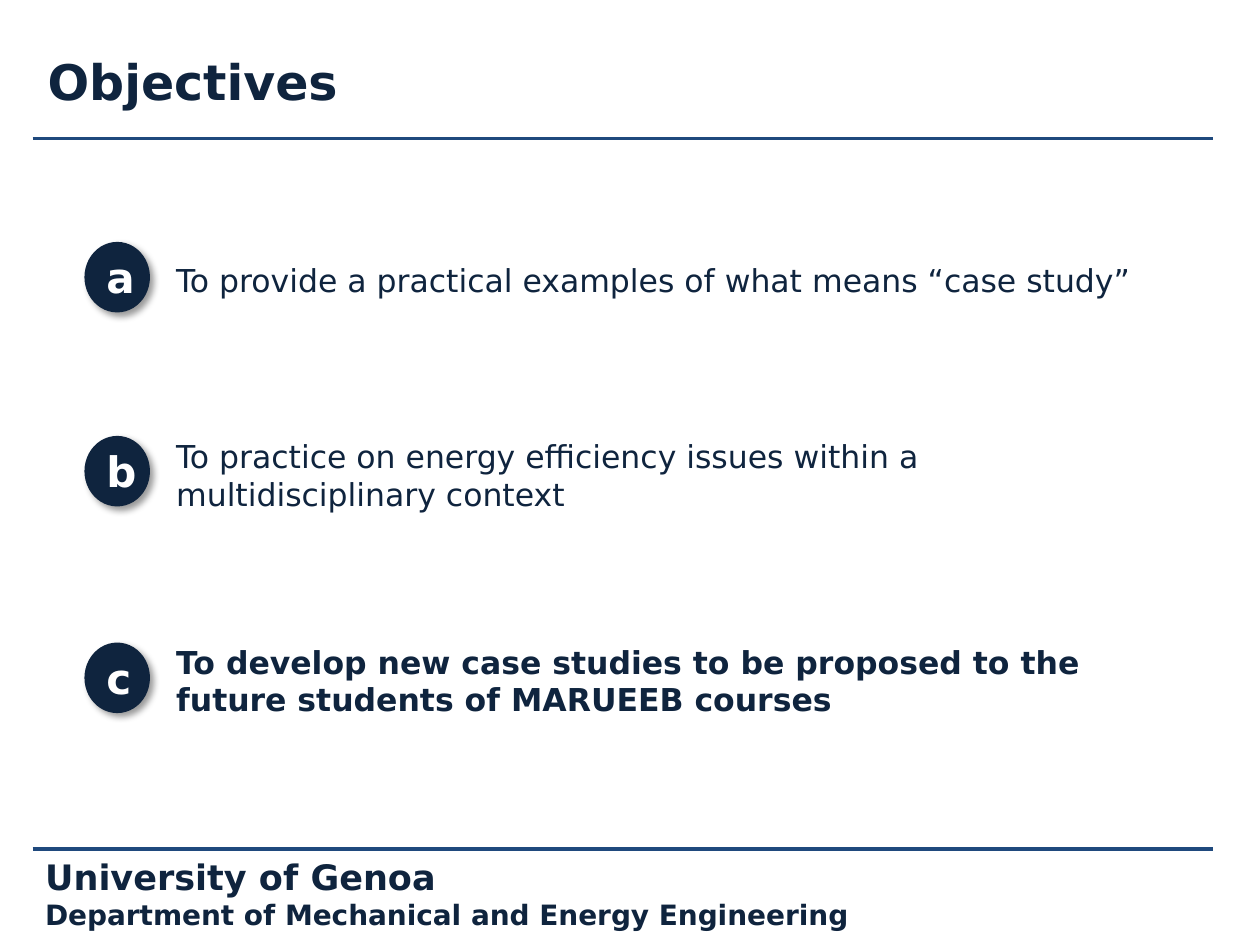
from lxml import etree
from pptx import Presentation
from pptx.dml.color import RGBColor as Rgb
from pptx.enum.shapes import MSO_CONNECTOR as Connector, MSO_SHAPE as Preset
from pptx.enum.text import MSO_ANCHOR as Anchor, MSO_AUTO_SIZE as AutoSize, PP_ALIGN as Align
from pptx.oxml import parse_xml
from pptx.oxml.ns import nsdecls, qn
from pptx.util import Inches, Pt

COLORS = {"navy": "0F243E", "rule": "1F497D", "badge": "FFFFFF", "shadow": "000000"}
COLUMNS, ROWS = 100, 75


class ObjectivesSlide:
    """Draws styled elements on one slide, placed by grid columns and rows."""

    def __init__(self, deck):
        self.slide = deck.slides.add_slide(deck.slide_layouts[6])
        self.column = deck.slide_width / COLUMNS
        self.row = deck.slide_height / ROWS
        self.font = "DejaVu Sans"

    def place(self, left, top, width, height):
        return (round(left * self.column), round(top * self.row),
                round(width * self.column), round(height * self.row))

    def color(self, name):
        return Rgb.from_string(COLORS[name])

    def fill_text(self, frame, lines, color="navy", align=Align.LEFT, **frame_format):
        for key, value in {"word_wrap": True, **frame_format}.items():
            setattr(frame, key, value)
        for index, (words, size, bold) in enumerate(lines):
            paragraph = frame.add_paragraph() if index else frame.paragraphs[0]
            paragraph.alignment = align
            run = paragraph.add_run()
            run.text = words
            for key, value in {"name": self.font, "size": Pt(size), "bold": bold}.items():
                setattr(run.font, key, value)
            run.font.color.rgb = self.color(color)

    def text(self, box, lines, **frame_format):
        frame = self.slide.shapes.add_textbox(*self.place(*box)).text_frame
        self.fill_text(frame, lines, **frame_format)

    def rule(self, row):
        left, top, width, _ = self.place(2.6, row, 93.7, 0)
        line = self.slide.shapes.add_connector(
            Connector.STRAIGHT, left, top, left + width, top)
        line.line.color.rgb = self.color("rule")
        line.line.width = Pt(2)
        etree.SubElement(line._element.spPr, qn("a:effectLst"))

    def badge(self, letter, row):
        disc = self.slide.shapes.add_shape(Preset.OVAL, *self.place(6.7, row, 5.2, 5.6))
        disc.fill.solid()
        disc.fill.fore_color.rgb = self.color("navy")
        disc.line.fill.background()
        disc.shadow.inherit = False
        disc._element.spPr.find(qn("a:effectLst")).append(parse_xml(
            f'<a:outerShdw {nsdecls("a")} blurRad="{Pt(4)}" dist="{Pt(3)}" dir="2700000" '
            f'algn="tl" rotWithShape="0"><a:srgbClr val="{COLORS["shadow"]}">'
            '<a:alpha val="40000"/></a:srgbClr></a:outerShdw>'))
        self.fill_text(disc.text_frame, [(letter, 24, True)], "badge", Align.CENTER,
                       vertical_anchor=Anchor.MIDDLE)


def main():
    deck = Presentation()
    deck.slide_width, deck.slide_height = Inches(10), Inches(7.5)
    page = ObjectivesSlide(deck)

    for row in (11, 67.4):
        page.rule(row)
    page.text((2.6, 68.4, 66.3, 5),
              [("University of Genoa", 20, True),
               ("Department of Mechanical and Energy Engineering", 16, True)],
              vertical_anchor=Anchor.MIDDLE)
    page.text((2.8, 2.9, 93.5, 7.1), [("Objectives", 28, True)],
              vertical_anchor=Anchor.MIDDLE)

    objectives = [
        ("a", 19.2, 20.2, 4, False,
         "To provide a practical examples of what means “case study”"),
        ("b", 34.6, 34.2, 7.1, False,
         "To practice on energy efficiency issues within a multidisciplinary context"),
        ("c", 51, 50.5, 7.1, True,
         "To develop new case studies to be proposed to the future students of MARUEEB courses"),
    ]
    for letter, badge_row, goal_row, height, bold, goal in objectives:
        page.text((13, goal_row, 78, height), [(goal, 18, bold)],
                  auto_size=AutoSize.SHAPE_TO_FIT_TEXT)
        page.badge(letter, badge_row)

    deck.save("out.pptx")


if __name__ == "__main__":
    main()
